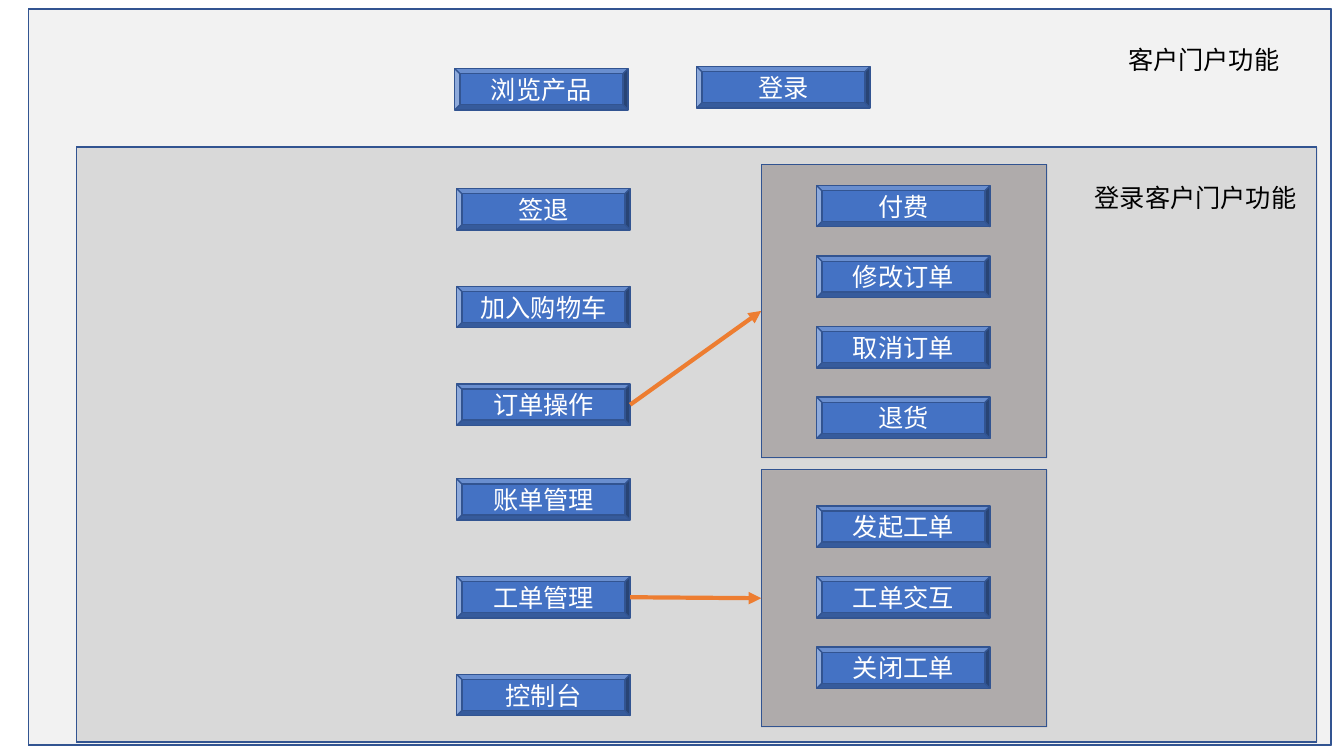
"""Build the customer portal function map slide."""
from dataclasses import dataclass

from lxml.etree import SubElement
from pptx import Presentation
from pptx.dml.color import RGBColor
from pptx.enum.shapes import MSO_CONNECTOR, MSO_SHAPE
from pptx.enum.text import MSO_ANCHOR, MSO_AUTO_SIZE, PP_ALIGN
from pptx.oxml.ns import qn
from pptx.shapes.autoshape import Shape
from pptx.slide import Slide
from pptx.text.text import _Paragraph
from pptx.util import Inches, Pt

COLORS = {
    "portal": "F2F2F2",
    "member": "D9D9D9",
    "group": "AFABAB",
    "button": "4472C4",
    "outline": "325491",
    "arrow": "ED7D31",
    "light": "FFFFFF",
    "dark": "000000",
}
FONT = "Calibri"
BUTTON_WIDTH, BUTTON_HEIGHT = 1.72, 0.41
RECTANGLE_RIGHT, RECTANGLE_LEFT = 3, 1
BEVEL_RIGHT, BEVEL_LEFT = "0", "4"


@dataclass(frozen=True)
class Panel:
    name: str
    left: float
    top: float
    width: float
    height: float
    color: str


@dataclass(frozen=True)
class ButtonColumn:
    left: float
    top: float
    step: float
    labels: tuple[str, ...]


@dataclass(frozen=True)
class Caption:
    text: str
    left: float
    top: float
    width: float


PANELS = (
    Panel("portal", 0.28, 0.09, 12.92, 7.3, "portal"),
    Panel("member", 0.76, 1.46, 12.3, 5.9, "member"),
    Panel("orders", 7.55, 1.63, 2.83, 2.91, "group"),
    Panel("tickets", 7.55, 4.66, 2.83, 2.55, "group"),
)
COLUMNS = (
    ButtonColumn(4.51, 0.68, 0, ("浏览产品",)),
    ButtonColumn(6.91, 0.66, 0, ("登录",)),
    ButtonColumn(4.53, 1.87, 0.97, ("签退", "加入购物车", "订单操作")),
    ButtonColumn(4.53, 4.75, 0.97, ("账单管理", "工单管理", "控制台")),
    ButtonColumn(8.1, 1.84, 0.7, ("付费", "修改订单", "取消订单", "退货")),
    ButtonColumn(8.1, 5.02, 0.7, ("发起工单", "工单交互", "关闭工单")),
)
CAPTIONS = (
    Caption("客户门户功能", 11.09, 0.39, 1.97),
    Caption("登录客户门户功能", 10.76, 1.76, 2.3),
)
ARROWS = (("订单操作", "orders"), ("工单管理", "tickets"))


def rgb(name: str) -> RGBColor:
    return RGBColor.from_string(COLORS[name])


def add_text(paragraph: _Paragraph, text: str, color: str) -> None:
    run = paragraph.add_run()
    run.text = text
    run.font.name = FONT
    run.font.size = Pt(18)
    run.font.color.rgb = rgb(color)


def add_bevel(slide: Slide, left: float, top: float, width: float,
              height: float, color: str) -> Shape:
    shape = slide.shapes.add_shape(
        MSO_SHAPE.BEVEL, Inches(left), Inches(top), Inches(width), Inches(height))
    shape.shadow.inherit = False
    shape.fill.solid()
    shape.fill.fore_color.rgb = rgb(color)
    shape.line.color.rgb = rgb("outline")
    shape.line.width = Pt(1)
    return shape


def add_panel(slide: Slide, panel: Panel) -> Shape:
    shape = add_bevel(slide, panel.left, panel.top, panel.width, panel.height, panel.color)
    shape.adjustments[0] = 0
    return shape


def add_button(slide: Slide, label: str, left: float, top: float) -> Shape:
    shape = add_bevel(slide, left, top, BUTTON_WIDTH, BUTTON_HEIGHT, "button")
    shape.text_frame.vertical_anchor = MSO_ANCHOR.MIDDLE
    paragraph = shape.text_frame.paragraphs[0]
    paragraph.alignment = PP_ALIGN.CENTER
    add_text(paragraph, label, "light")
    return shape


def add_caption(slide: Slide, caption: Caption) -> None:
    box = slide.shapes.add_textbox(
        Inches(caption.left), Inches(caption.top), Inches(caption.width), Inches(0.4))
    box.text_frame.word_wrap = True
    box.text_frame.auto_size = MSO_AUTO_SIZE.SHAPE_TO_FIT_TEXT
    add_text(box.text_frame.paragraphs[0], caption.text, "dark")


def add_arrow(slide: Slide, button: Shape, panel: Shape) -> None:
    connector = slide.shapes.add_connector(MSO_CONNECTOR.STRAIGHT, 0, 0, 0, 0)
    connector.begin_connect(button, RECTANGLE_RIGHT)
    connector.end_connect(panel, RECTANGLE_LEFT)
    for tag, site in (("a:stCxn", BEVEL_RIGHT), ("a:endCxn", BEVEL_LEFT)):
        next(connector._element.iter(qn(tag))).set("idx", site)
    connector.line.color.rgb = rgb("arrow")
    connector.line.width = Pt(3)
    SubElement(connector.line._get_or_add_ln(), qn("a:tailEnd"), type="triangle")
    SubElement(connector._element.spPr, qn("a:effectLst"))


def main() -> None:
    presentation = Presentation()
    presentation.slide_width = Inches(13.33)
    presentation.slide_height = Inches(7.5)
    slide = presentation.slides.add_slide(presentation.slide_layouts[6])

    panels = {panel.name: add_panel(slide, panel) for panel in PANELS}
    buttons = {
        label: add_button(slide, label, column.left, column.top + row * column.step)
        for column in COLUMNS
        for row, label in enumerate(column.labels)
    }
    for caption in CAPTIONS:
        add_caption(slide, caption)
    for label, panel_name in ARROWS:
        add_arrow(slide, buttons[label], panels[panel_name])

    presentation.save("out.pptx")


if __name__ == "__main__":
    main()
